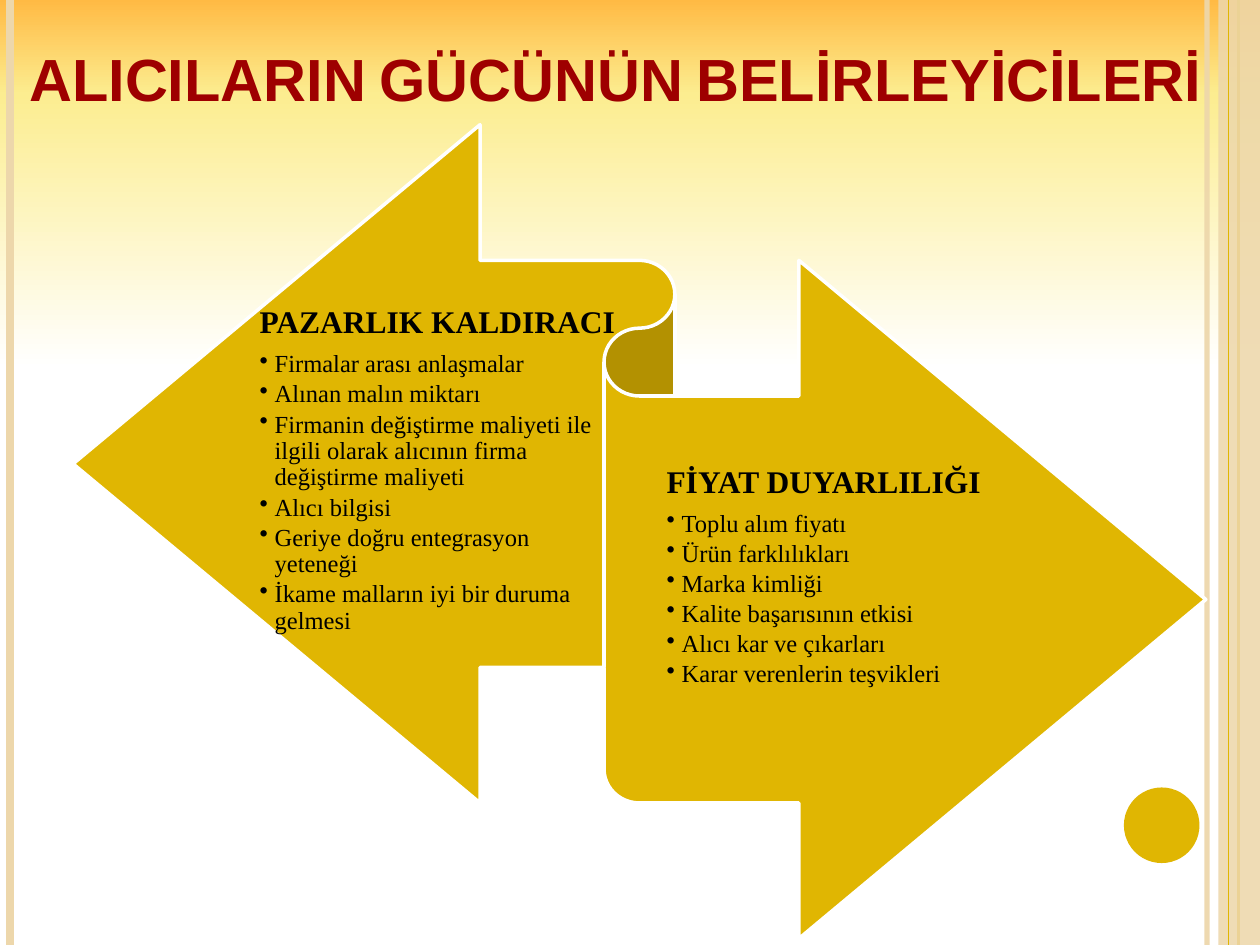
from pptx import Presentation
from pptx.dml.color import RGBColor
from pptx.enum import shapes, text
from pptx.oxml import ns, xmlchemy
from pptx.util import Inches, Pt

COLORS = {
    "gold": "E0B602", "sand": "EDD7AB", "title": "9E0000", "text": "000000",
    "outline": "FFFFFF", "sky": "FFBA44", "glow": "FCED90", "ground": "FFFFFF",
}

LEVERAGE = ("PAZARLIK KALDIRACI", [
    "Firmalar arası anlaşmalar",
    "Alınan malın miktarı",
    "Firmanin değiştirme maliyeti ile ilgili olarak alıcının firma değiştirme maliyeti",
    "Alıcı bilgisi",
    "Geriye doğru entegrasyon yeteneği",
    "İkame malların iyi bir duruma gelmesi",
])
SENSITIVITY = ("FİYAT DUYARLILIĞI", [
    "Toplu alım fiyatı",
    "Ürün farklılıkları",
    "Marka kimliği",
    "Kalite başarısının etkisi",
    "Alıcı kar ve çıkarları",
    "Karar verenlerin teşvikleri",
])


def rgb(name):
    return RGBColor.from_string(COLORS[name])


def add_element(parent, tag, **attributes):
    element = xmlchemy.OxmlElement(tag)
    for key, value in attributes.items():
        element.set(key, str(value))
    parent.append(element)
    return element


def set_alpha(fill_parent, percent):
    color = next(fill_parent.iter(ns.qn("a:srgbClr")))
    add_element(color, "a:alpha", val=percent * 1000)


def paint_background(slide):
    fill = slide.background.fill
    fill.gradient()
    fill.gradient_angle = 270
    stops = next(slide.element.iter(ns.qn("a:gsLst")))
    for stop in list(stops):
        stops.remove(stop)
    for percent, name in ((0, "sky"), (10, "glow"), (39, "ground")):
        stop = add_element(stops, "a:gs", pos=percent * 1000)
        add_element(stop, "a:srgbClr", val=COLORS[name])


def add_solid(slide, preset, box, color):
    solid = slide.shapes.add_shape(preset, *map(Inches, box))
    solid.shadow.inherit = False
    solid.fill.solid()
    solid.fill.fore_color.rgb = rgb(color)
    solid.line.fill.background()
    return solid


def add_rail(slide, x, height, color, weight):
    rail = slide.shapes.add_connector(
        shapes.MSO_CONNECTOR.STRAIGHT, Inches(x), 0, Inches(x), Inches(height))
    rail.line.color.rgb = rgb(color)
    rail.line.width = Pt(weight)
    add_element(rail.element.spPr, "a:effectLst")
    return rail


def add_frame(slide, width, height):
    """Vertical rails, right-hand band and page dot."""
    set_alpha(add_rail(slide, width - 0.42, height, "sand", 3).element, 93)
    add_rail(slide, 0.08, height, "sand", 4.5)
    add_rail(slide, width - 0.17, height, "gold", 1.5)
    band = add_solid(slide, shapes.MSO_SHAPE.RECTANGLE,
                     (width - 0.33, 0, 0.33, height), "sand")
    set_alpha(band.element, 87)
    add_rail(slide, width - 0.25, height, "gold", 0.75)
    add_solid(slide, shapes.MSO_SHAPE.OVAL, (width - 1.08, 6.25, 0.6, 0.6), "gold")


def style_run(run, size, font, color, bold):
    run.font.size = Pt(size)
    run.font.name = font
    run.font.bold = bold
    run.font.color.rgb = rgb(color)


def set_insets(frame, horizontal, vertical):
    frame.margin_left = frame.margin_right = Inches(horizontal)
    frame.margin_top = frame.margin_bottom = Inches(vertical)


def place_title(slide, box):
    title = slide.shapes.title
    title.left, title.top, title.width, title.height = map(Inches, box)
    frame = title.text_frame
    frame.text = "ALICILARIN GÜCÜNÜN BELİRLEYİCİLERİ"
    frame.word_wrap = True
    frame.auto_size = text.MSO_AUTO_SIZE.NONE
    frame.vertical_anchor = text.MSO_ANCHOR.BOTTOM
    set_insets(frame, 0, 0)
    heading = frame.paragraphs[0]
    heading.alignment = text.PP_ALIGN.CENTER
    heading.line_spacing = 0.95
    style_run(heading.runs[0], 34, "Arial", "title", True)
    heading.runs[0].font._element.set("cap", "small")


def format_paragraph(paragraph, size, bold, after_percent):
    paragraph.line_spacing = 0.9
    properties = paragraph._p.get_or_add_pPr()
    after = add_element(properties, "a:spcAft")
    add_element(after, "a:spcPct", val=after_percent * 1000)
    style_run(paragraph.runs[0], size, "Times New Roman", "text", bold)
    return properties


def add_determinants(slide, box, heading, items):
    """Bold heading with its bulleted list, centred vertically in the box."""
    frame = slide.shapes.add_textbox(*map(Inches, box)).text_frame
    frame.word_wrap = True
    frame.vertical_anchor = text.MSO_ANCHOR.MIDDLE
    set_insets(frame, 0, 0.07)
    frame.text = "\n".join([heading, *items])
    first, *bullets = frame.paragraphs
    format_paragraph(first, 18, True, 35)
    for bullet in bullets:
        bullet.level = 1
        properties = format_paragraph(bullet, 14, False, 15)
        properties.set("marL", str(Inches(0.12)))
        properties.set("indent", str(Inches(-0.12)))
        add_element(properties, "a:buChar", char="•")


def add_ribbon(slide, box):
    """Two-way ribbon arrow with one list on each half."""
    left, top, _, _ = box
    ribbon = add_solid(slide, shapes.MSO_SHAPE.LEFT_RIGHT_RIBBON, box, "gold")
    ribbon.line.color.rgb = rgb("outline")
    ribbon.line.width = Pt(2)
    add_determinants(slide, (left + 1.48, top + 1.14, 2.85, 3.21), *LEVERAGE)
    add_determinants(slide, (left + 4.71, top + 2.19, 3.58, 2.8), *SENSITIVITY)


def main():
    deck = Presentation()
    deck.slide_width, deck.slide_height = Inches(10), Inches(7.5)
    slide = deck.slides.add_slide(deck.slide_layouts.get_by_name("Title Only"))
    paint_background(slide)
    add_frame(slide, 10, 7.5)
    place_title(slide, (-0.51, 0.16, 10.79, 0.75))
    add_ribbon(slide, (0.58, 0.99, 8.99, 6.46))
    deck.save("out.pptx")


if __name__ == "__main__":
    main()
